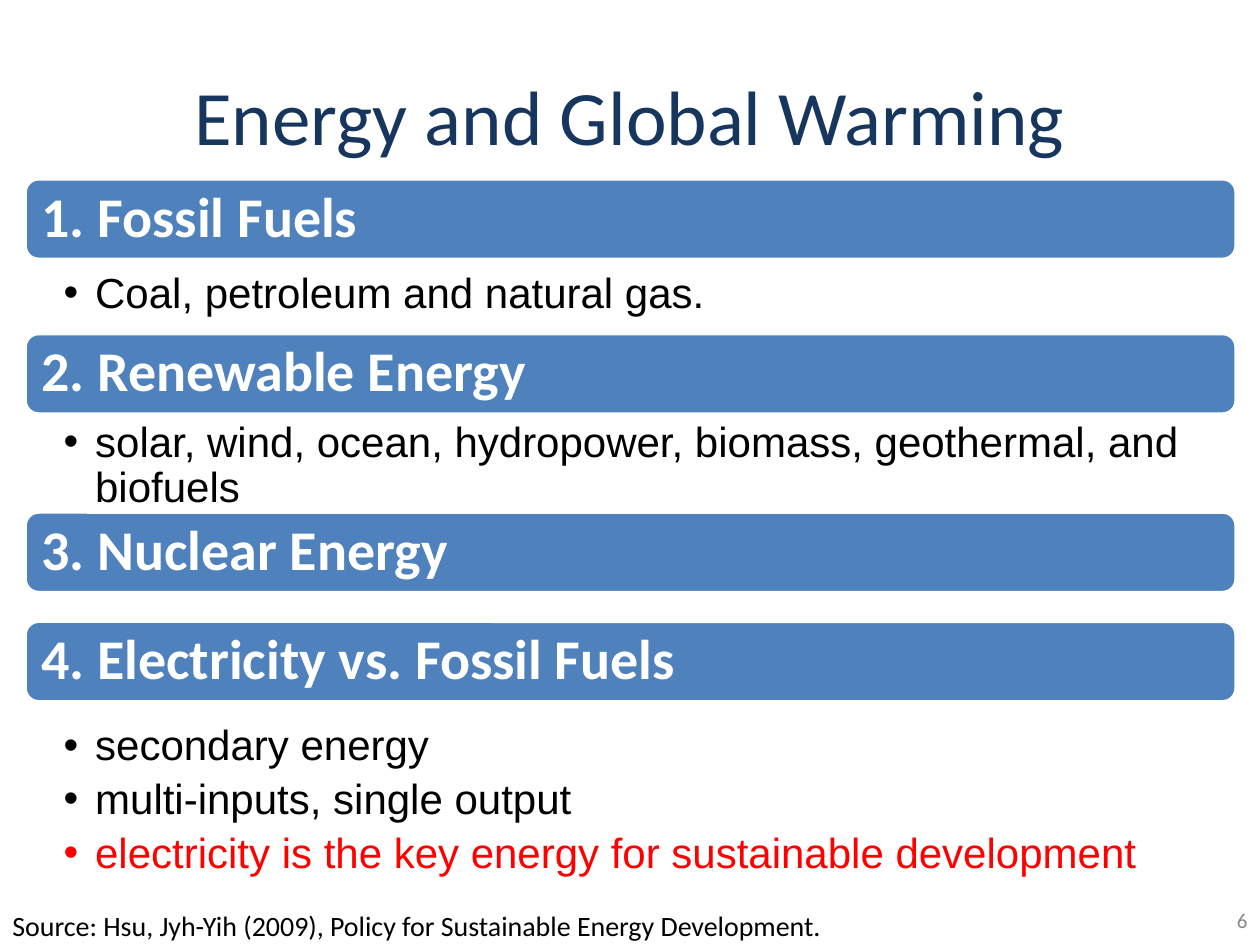
from dataclasses import dataclass

from lxml.etree import SubElement
from pptx import Presentation
from pptx.dml.color import RGBColor
from pptx.enum.shapes import MSO_SHAPE
from pptx.enum.text import MSO_ANCHOR, PP_ALIGN
from pptx.oxml.ns import qn
from pptx.util import Pt


@dataclass(frozen=True)
class Theme:
    navy: str = "17365D"
    blue: str = "4F81BD"
    white: str = "FFFFFF"
    black: str = "000000"
    red: str = "FF0000"
    gray: str = "888888"
    head: str = "Calibri"
    body: str = "Arial"
    title: int = 44
    bar: int = 32
    item: int = 24
    note: int = 16
    page: int = 12


class Deck:
    def __init__(self, theme):
        self.theme = theme
        self.file = Presentation()
        self.file.slide_width, self.file.slide_height = Pt(720), Pt(540)
        self.slide = self.file.slides.add_slide(self.file.slide_layouts[6])

    def pad(self, frame, left, top, right, bottom):
        frame.word_wrap = True
        frame.margin_left, frame.margin_top = Pt(left), Pt(top)
        frame.margin_right, frame.margin_bottom = Pt(right), Pt(bottom)

    def style(self, para, size, color, face=None, bold=False):
        font = para.font
        font.size, font.bold = Pt(size), bold
        font.name = face or self.theme.head
        font.color.rgb = RGBColor.from_string(color)

    def box(self, x, y, w, h):
        area = self.slide.shapes.add_textbox(Pt(x), Pt(y), Pt(w), Pt(h))
        return area.text_frame

    def label(self, text, x, y, w, h, size, color,
              align=PP_ALIGN.LEFT, anchor=MSO_ANCHOR.MIDDLE, lead=1.0):
        frame = self.box(x, y, w, h)
        self.pad(frame, 7.2, 3.6, 7.2, 3.6)
        frame.vertical_anchor = anchor
        para = frame.paragraphs[0]
        para.text, para.alignment, para.line_spacing = text, align, lead
        self.style(para, size, color)

    def bar(self, text, x, y, w, h):
        look = self.theme
        shape = self.slide.shapes.add_shape(
            MSO_SHAPE.ROUNDED_RECTANGLE, Pt(x), Pt(y), Pt(w), Pt(h))
        shape.shadow.inherit = False
        shape.fill.solid()
        shape.fill.fore_color.rgb = RGBColor.from_string(look.blue)
        shape.line.color.rgb = RGBColor.from_string(look.white)
        shape.line.width = Pt(2)
        frame = shape.text_frame
        self.pad(frame, 7.2, 7.2, 7.2, 7.2)
        frame.vertical_anchor = MSO_ANCHOR.MIDDLE
        para = frame.paragraphs[0]
        para.text, para.alignment, para.line_spacing = text, PP_ALIGN.LEFT, 0.9
        self.style(para, look.bar, look.white, bold=True)

    def bullets(self, items, x, y, w, h):
        look = self.theme
        frame = self.box(x, y, w, h)
        self.pad(frame, 22, 2.2, 13.6, 2.2)
        for i, (text, color) in enumerate(items):
            para = frame.add_paragraph() if i else frame.paragraphs[0]
            para.text, para.line_spacing = text, 0.9
            if i:
                para.space_before = Pt(4.8)
            props = para._p.get_or_add_pPr()
            props.set("marL", str(Pt(18)))
            props.set("indent", str(Pt(-18)))
            SubElement(props, qn("a:buFont"), typeface="Arial")
            SubElement(props, qn("a:buChar"), char="•")
            self.style(para, look.item, color, look.body)


def main():
    look = Theme()
    deck = Deck(look)

    # Title
    deck.label("Energy and Global Warming", 36, 49, 648, 39.6, look.title,
               look.navy, PP_ALIGN.CENTER, lead=0.9)

    # Sections: heading, bar top, list top, list height, items
    left, wide, high = 14.4, 692, 46
    parts = [
        ("Fossil Fuels", 102.2, 153.4, 60,
         [("Coal, petroleum and natural gas.", look.black)]),
        ("Renewable Energy", 190.6, 238.3, 60,
         [("solar, wind, ocean, hydropower, biomass, geothermal, and biofuels",
           look.black)]),
        ("Nuclear Energy", 292.6, 0, 0, []),
        ("Electricity vs. Fossil Fuels", 355, 411.8, 92,
         [("secondary energy", look.black),
          ("multi-inputs, single output", look.black),
          ("electricity is the key energy for sustainable development",
           look.red)]),
    ]
    for num, (name, top, low, tall, items) in enumerate(parts, 1):
        deck.bar(f"{num}. {name}", left, top, wide, high)
        if items:
            deck.bullets(items, left, low, wide, tall)

    # Footer
    deck.label("Source: Hsu, Jyh-Yih (2009), Policy for Sustainable Energy "
               "Development.", 0, 515.5, 632, 26.6, look.note, look.black,
               anchor=MSO_ANCHOR.TOP)
    deck.label("6", 552, 511.2, 168, 28.8, look.page, look.gray,
               PP_ALIGN.RIGHT)

    deck.file.save("out.pptx")


if __name__ == "__main__":
    main()
